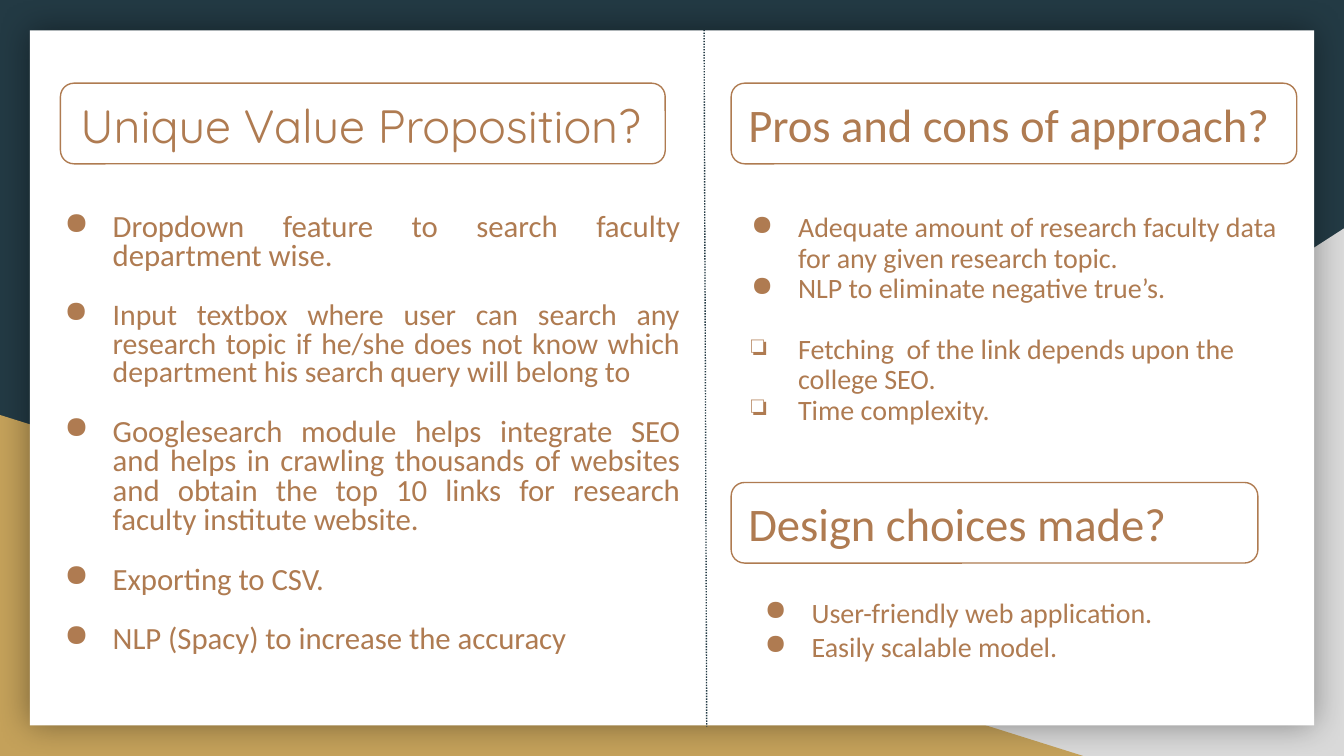
"""Build a project summary slide with value proposition, pros and cons, and design choices."""
from lxml import etree
from pptx import Presentation
from pptx import util as u
from pptx.dml.color import RGBColor
from pptx.enum import dml, shapes, text
from pptx.oxml import ns

Pt = u.Pt
COLOURS = {"navy": "233A44", "grey": "D9D9D9", "gold": "C4A15A",
           "white": "FFFFFF", "copper": "AF7B51", "black": "000000"}


def write(frame, content, size=15, font="Calibri", bullet=None, indent=25.2,
          spacing=1.0, before=0, align=text.PP_ALIGN.LEFT, anchor=text.MSO_ANCHOR.TOP):
    frame.word_wrap = True
    frame.vertical_anchor = anchor
    frame.margin_left = frame.margin_right = frame.margin_top = frame.margin_bottom = Pt(7.2)
    paragraph = frame.paragraphs[0]
    if paragraph.runs:
        paragraph = frame.add_paragraph()
    paragraph.alignment = align
    paragraph.line_spacing = spacing
    paragraph.space_before = Pt(before)
    run = paragraph.add_run()
    run.text = content
    run.font.size = Pt(size)
    run.font.name = font
    run.font.color.rgb = RGBColor.from_string(COLOURS["copper"])
    if bullet:
        properties = paragraph._p.get_or_add_pPr()
        properties.set("marL", str(Pt(36)))
        properties.set("indent", str(-Pt(indent)))
        bullet_colour = etree.SubElement(properties, ns.qn("a:buClr"))
        etree.SubElement(bullet_colour, ns.qn("a:srgbClr"), val=COLOURS["copper"])
        etree.SubElement(properties, ns.qn("a:buChar"), char=bullet)


def add_panel(kind, left, top, width, height, fill=None):
    panel = slide.shapes.add_shape(kind, Pt(left), Pt(top), Pt(width), Pt(height))
    panel.shadow.inherit = False
    if fill:
        panel.fill.solid()
        panel.fill.fore_color.rgb = RGBColor.from_string(COLOURS[fill])
        panel.line.fill.background()
    else:
        panel.fill.background()
        panel.line.color.rgb = RGBColor.from_string(COLOURS["copper"])
        panel.line.width = Pt(0.75)
    return panel


deck = Presentation()
deck.slide_width, deck.slide_height = Pt(720), Pt(405)
slide = deck.slides.add_slide(deck.slide_layouts[6])
slide.background.fill.solid()
slide.background.fill.fore_color.rgb = RGBColor.from_string(COLOURS["navy"])

TRIANGLE = shapes.MSO_SHAPE.RIGHT_TRIANGLE
grey_corner = add_panel(TRIANGLE, 282, 122.4, 438, 282.6, "grey")
grey_corner._element.spPr.xfrm.set("flipH", "1")
add_panel(TRIANGLE, 0, 222.3, 580.3, 182.7, "gold")

card = add_panel(shapes.MSO_SHAPE.RECTANGLE, 16, 16.3, 688, 372.4, "white")
glow = etree.SubElement(card._element.spPr.find(ns.qn("a:effectLst")), ns.qn("a:outerShdw"),
                        blurRad=str(Pt(18)), dist="0", dir="0", algn="ctr", rotWithShape="0")
glow_colour = etree.SubElement(glow, ns.qn("a:srgbClr"), val=COLOURS["black"])
etree.SubElement(glow_colour, ns.qn("a:alpha"), val="40000")

divider = slide.shapes.add_connector(
    shapes.MSO_CONNECTOR.STRAIGHT, Pt(377.2), Pt(16), Pt(378.6), Pt(389.3))
divider.line.color.rgb = RGBColor.from_string(COLOURS["navy"])
divider.line.width = Pt(0.75)
divider.line.dash_style = dml.MSO_LINE.ROUND_DOT
etree.SubElement(divider._element.spPr, ns.qn("a:effectLst"))

headings = [
    (32.4, 44.6, 324, None),
    (391.7, 44.6, 303, "Pros and cons of approach?"),
    (391.7, 258.5, 282.2, "Design choices made?"),
]
for left, top, width, heading in headings:
    heading_box = add_panel(shapes.MSO_SHAPE.ROUNDED_RECTANGLE, left, top, width, 43.2)
    if heading:
        write(heading_box.text_frame, heading, size=25, anchor=text.MSO_ANCHOR.MIDDLE)

value_title = slide.shapes.add_textbox(Pt(36), Pt(44.6), Pt(365.8), Pt(43.2))
write(value_title.text_frame, "Unique Value Proposition?", size=25, font="Quicksand")

value_points = [
    ("Dropdown feature to search faculty department wise.", 16.5),
    ("Input textbox where user can search any research topic if he/she does not know "
     "which department his search query will belong to", 16),
    ("Googlesearch module helps integrate SEO and helps in crawling thousands of websites "
     "and obtain the top 10 links for research faculty institute website.", 16.5),
    ("Exporting to CSV.", 16.5),
    ("NLP (Spacy) to increase the accuracy", 16.5),
]
value_list = slide.shapes.add_textbox(Pt(17.3), Pt(107.3), Pt(354.2), Pt(278))
for number, (point, size) in enumerate(value_points):
    write(value_list.text_frame, point, size=size, bullet="●", indent=25.9, spacing=0.8,
          before=16 if number else 0, align=text.PP_ALIGN.JUSTIFY)

approach_points = [
    ("Adequate amount of research faculty data for any given research topic.", "●", 0),
    ("NLP to eliminate negative true’s.", "●", 0),
    ("Fetching  of the link depends upon the college SEO.", "❏", 16.5),
    ("Time complexity.", "❏", 0),
]
approach_list = slide.shapes.add_textbox(Pt(384.5), Pt(107.3), Pt(309.6), Pt(131))
for point, bullet, gap in approach_points:
    write(approach_list.text_frame, point, bullet=bullet, spacing=0.9, before=gap)

design_list = slide.shapes.add_textbox(Pt(391.7), Pt(311.8), Pt(303), Pt(51))
for point in ("User-friendly web application.", "Easily scalable model."):
    write(design_list.text_frame, point, bullet="●")

deck.save("out.pptx")
